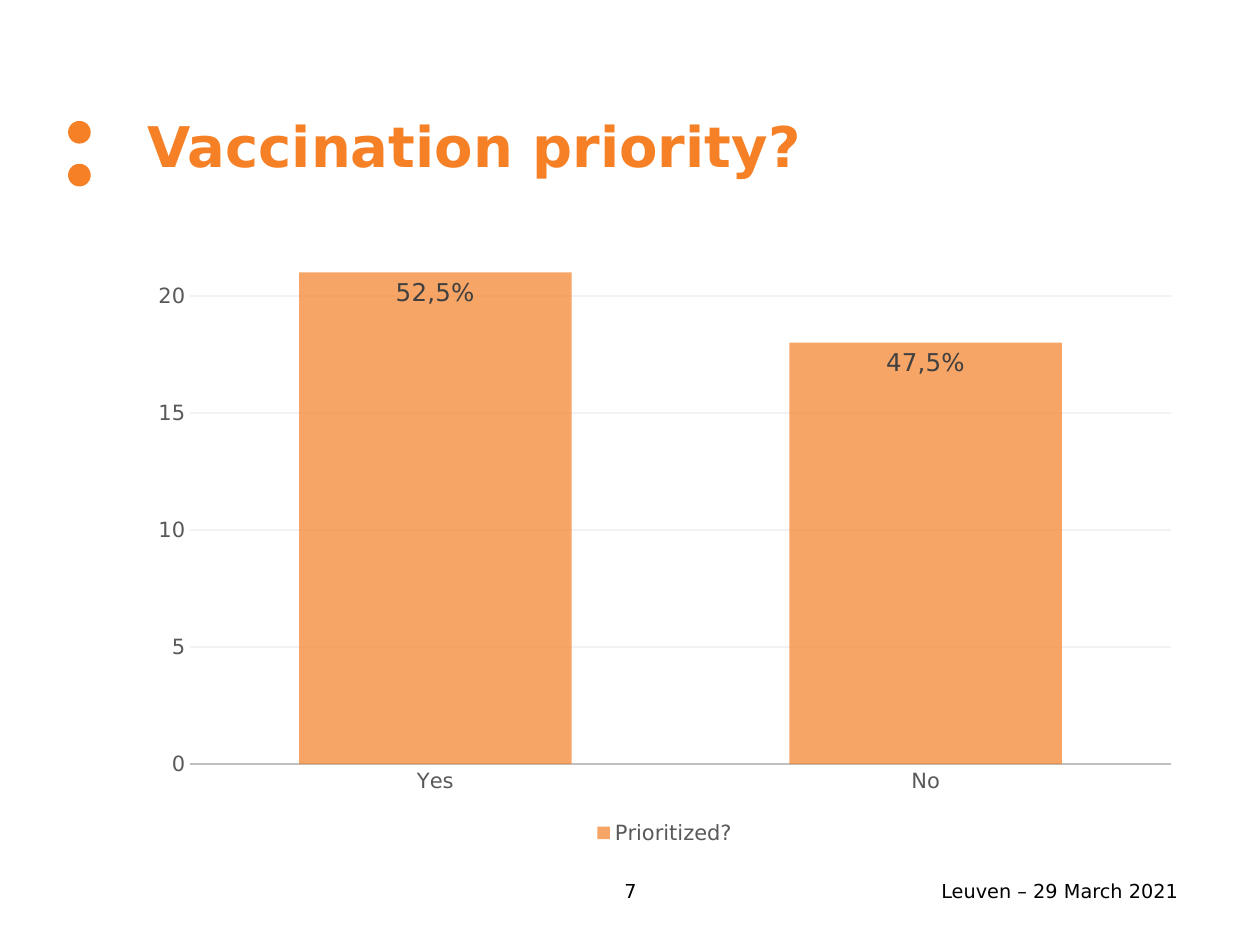
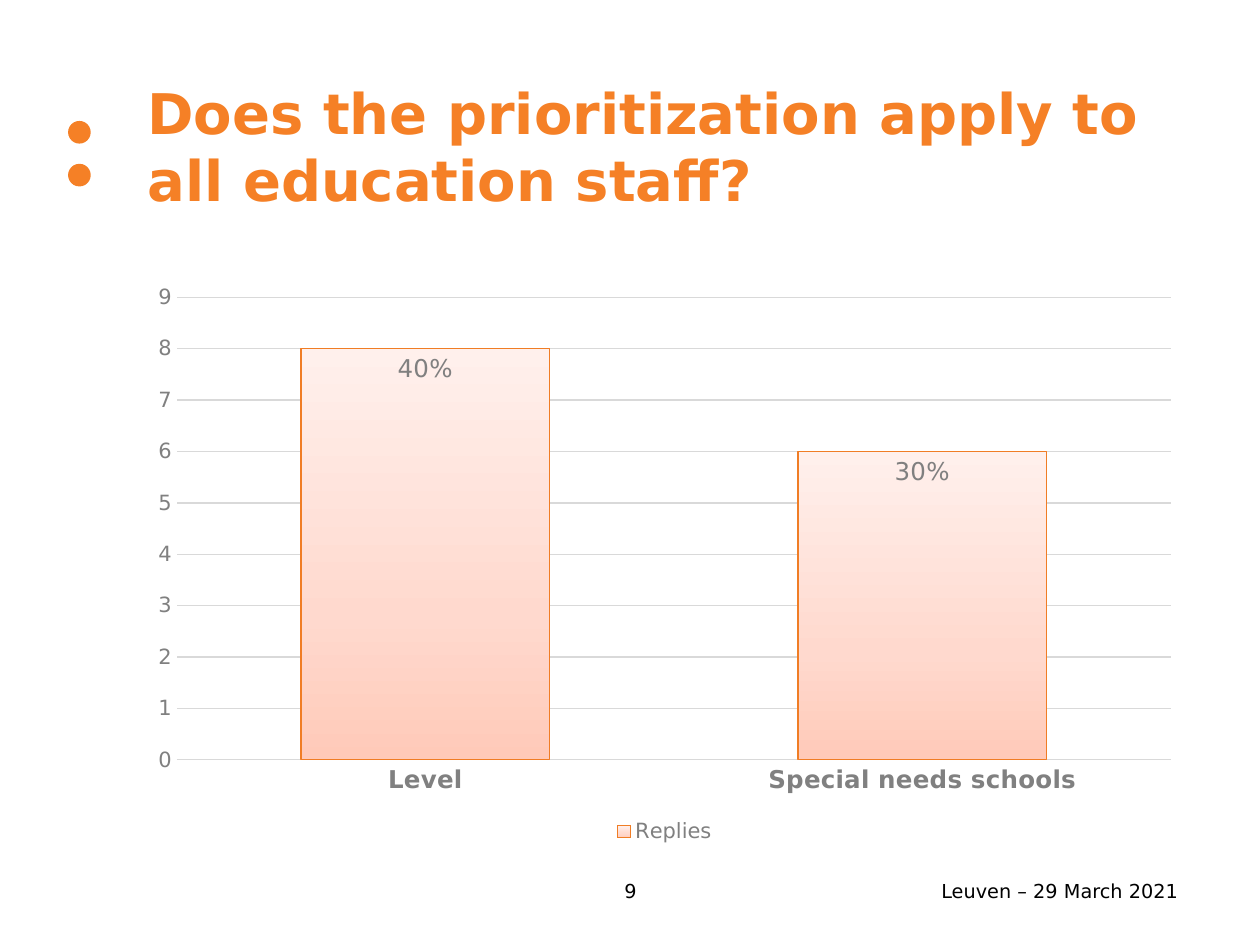
from copy import deepcopy

from lxml import etree
from pptx import Presentation
from pptx.chart.data import CategoryChartData
from pptx.dml.color import RGBColor
from pptx.enum import chart as ch, shapes, text
from pptx.oxml.ns import qn
from pptx.util import Inches, Pt

FONT = "DejaVu Sans"
ORANGE = RGBColor(0xF5, 0x80, 0x26)
EDGE = RGBColor(0xF0, 0x7D, 0x25)
BLACK = RGBColor(0, 0, 0)
DARK = RGBColor(0x40, 0x40, 0x40)
SLATE = RGBColor(0x59, 0x59, 0x59)
GREY = RGBColor(0x80, 0x80, 0x80)
SILVER = RGBColor(0xBF, 0xBF, 0xBF)
LIGHT = RGBColor(0xD9, 0xD9, 0xD9)
PALE = RGBColor(0xF2, 0xF2, 0xF2)
FADE = [(0, RGBColor(0xFF, 0xCA, 0xB9)),
        (0.35, RGBColor(0xFF, 0xD9, 0xCE)),
        (1, RGBColor(0xFF, 0xF0, 0xEC))]

# Content
FOOTER = "Leuven – 29 March 2021"
SLIDES = [
    dict(title="Vaccination priority?", page="7", top=1.88, high=4.87,
         series="Prioritized?", cats=["Yes", "No"], vals=[21, 18],
         labels=["52,5%", "47,5%"], ink=SLATE, note=DARK, grid=PALE,
         base=(SILVER, 1.25), cat=(12, False), max=22, step=5,
         gap=80, overlap=25, faded=False),
    dict(title="Does the prioritization apply to all education staff?",
         page="9", top=2.17, high=4.57,
         series="Replies", cats=["Level", "Special needs schools"],
         vals=[8, 6], labels=["40%", "30%"], ink=GREY, note=GREY, grid=LIGHT,
         base=(LIGHT, 0.75), cat=(14, True), max=9, step=1,
         gap=100, overlap=-24, faded=True),
]


def style(font, size, color, bold=False):
    font.name, font.size, font.bold = FONT, Pt(size), bold
    font.color.rgb = color


def rule(line, color, width):
    line.color.rgb = color
    line.width = Pt(width)


def fill_text(frame, words, size, color, bold=False, align=None):
    frame.word_wrap = True
    frame.auto_size = text.MSO_AUTO_SIZE.NONE
    frame.vertical_anchor = text.MSO_ANCHOR.MIDDLE
    frame.text = words
    para = frame.paragraphs[0]
    para.alignment = align
    style(para.runs[0].font, size, color, bold)


# Dots, title and footer
def add_frame(slide, item):
    for top in (0.96, 1.3):
        dot = slide.shapes.add_shape(
            shapes.MSO_SHAPE.OVAL, Inches(0.54), Inches(top),
            Inches(0.18), Inches(0.18))
        dot.shadow.inherit = False
        dot.fill.solid()
        dot.fill.fore_color.rgb = ORANGE
        dot.line.fill.background()

    title = slide.shapes.title
    title.left, title.top = Inches(1.07), Inches(0.53)
    title.width, title.height = Inches(8.37), Inches(1.25)
    fill_text(title.text_frame, item["title"], 32, ORANGE, True,
              text.PP_ALIGN.LEFT)

    for left, wide, words, align in (
            (6.22, 3.23, FOOTER, text.PP_ALIGN.RIGHT),
            (4.31, 1.39, item["page"], text.PP_ALIGN.CENTER)):
        box = slide.shapes.add_textbox(
            Inches(left), Inches(6.87), Inches(wide), Inches(0.4))
        fill_text(box.text_frame, words, 11, BLACK, align=align)


# Column fill: three-stop fade or see-through orange
def paint(series, faded):
    fill = series.format.fill
    if faded:
        fill.gradient()
        fill.gradient_angle = 90
        stops = series._element.find(".//" + qn("a:gsLst"))
        stops.append(deepcopy(stops[0]))
        for stop, (place, color) in zip(fill.gradient_stops, FADE):
            stop.position = place
            stop.color.rgb = color
        rule(series.format.line, EDGE, 0.75)
    else:
        fill.solid()
        fill.fore_color.rgb = ORANGE
        tint = series._element.find(".//" + qn("a:srgbClr"))
        etree.SubElement(tint, qn("a:alpha"), val="70000")
        series.format.line.fill.background()


def add_columns(slide, item):
    data = CategoryChartData()
    data.categories = item["cats"]
    data.add_series(item["series"], item["vals"])
    chart = slide.shapes.add_chart(
        ch.XL_CHART_TYPE.COLUMN_CLUSTERED, Inches(1.09), Inches(item["top"]),
        Inches(8.37), Inches(item["high"]), data).chart
    style(chart.font, 10, BLACK)
    chart.has_title = False
    chart.has_legend = True
    chart.legend.position = ch.XL_LEGEND_POSITION.BOTTOM
    chart.legend.include_in_layout = False
    style(chart.legend.font, 12, item["ink"])

    # Axes
    cat, val = chart.category_axis, chart.value_axis
    for axis in (cat, val):
        axis.major_tick_mark = axis.minor_tick_mark = ch.XL_TICK_MARK.NONE
    size, bold = item["cat"]
    style(cat.tick_labels.font, size, item["ink"], bold)
    style(val.tick_labels.font, 12, item["ink"])
    rule(cat.format.line, *item["base"])
    val.format.line.fill.background()
    val.minimum_scale, val.maximum_scale = 0, item["max"]
    val.major_unit = item["step"]
    val.has_major_gridlines = True
    rule(val.major_gridlines.format.line, item["grid"], 0.75)

    # Columns and their labels
    plot = chart.plots[0]
    plot.vary_by_categories = False
    plot.gap_width, plot.overlap = item["gap"], item["overlap"]
    series = plot.series[0]
    paint(series, item["faded"])
    for i, words in enumerate(item["labels"]):
        label = series.points[i].data_label
        label.text_frame.text = words
        style(label.text_frame.paragraphs[0].runs[0].font, 14, item["note"])
        label.position = ch.XL_LABEL_POSITION.INSIDE_END


def main():
    deck = Presentation()
    deck.slide_width, deck.slide_height = Inches(10), Inches(7.5)
    for item in SLIDES:
        slide = deck.slides.add_slide(deck.slide_layouts[5])
        add_frame(slide, item)
        add_columns(slide, item)
    deck.save("out.pptx")


if __name__ == "__main__":
    main()
